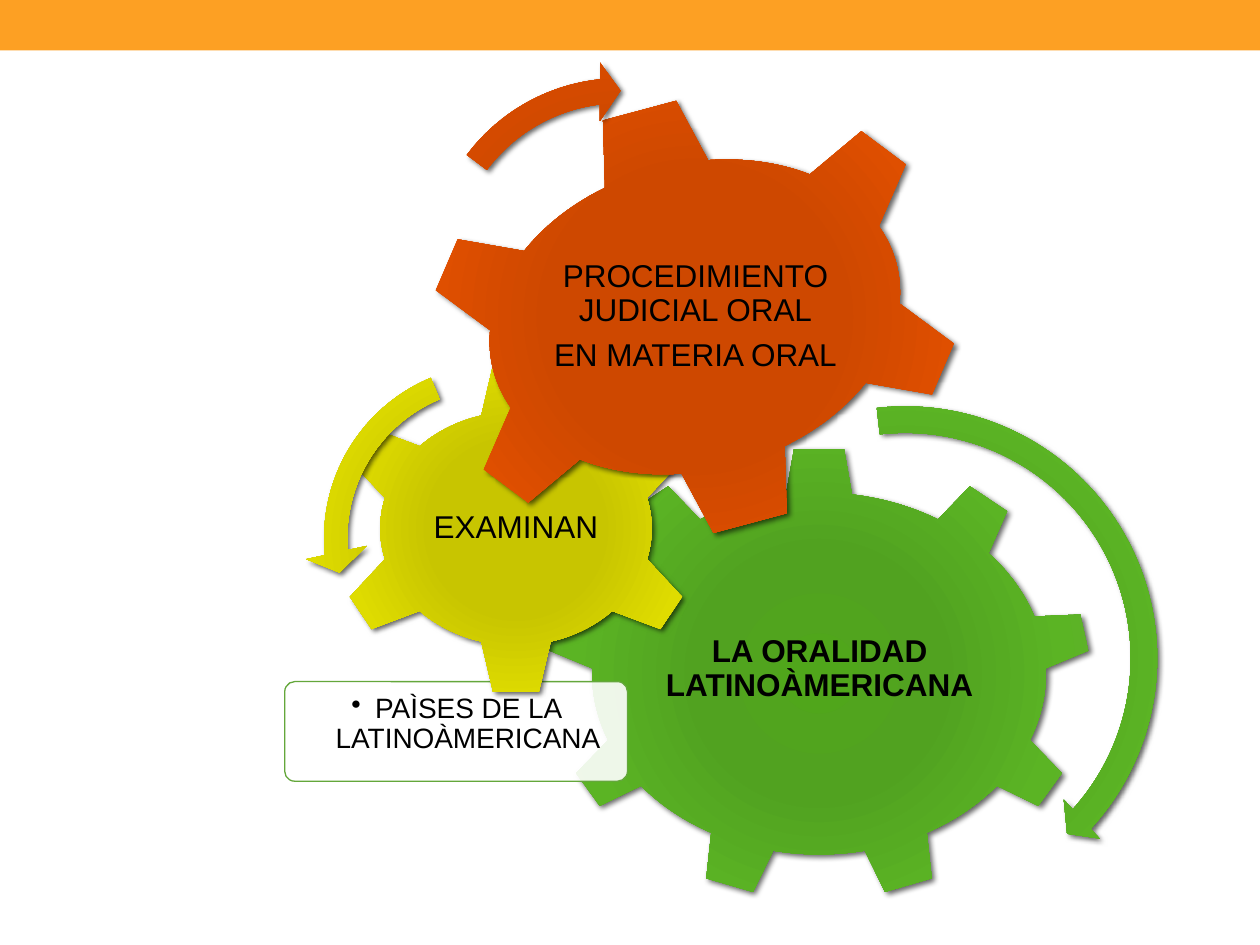
from pptx import Presentation
from pptx import util as u
from pptx.dml.color import RGBColor
from pptx.enum import shapes, text
from pptx.oxml import parse_xml
from pptx.oxml.ns import nsdecls, qn

COLORS = {"bar": "FDA023", "white": "FFFFFF", "black": "000000", "border": "64A73B"}
GRADIENTS = {
    "green": ("50A61B", "51A220", "5BB424", "64A73B"),
    "yellow": ("C8C500", "C8C500", "DFDC00", "C8C621"),
    "orange": ("CE4800", "CE4800", "E55100", "EB5605"),
}
STOPS = (0, 34, 70, 100)
KIND = shapes.MSO_SHAPE


def rgb(name):
    return RGBColor.from_string(COLORS[name])


class GearSlide:
    font = "Arial"

    def __init__(self, slide):
        self.slide = slide

    def shape(self, kind, box, adjustments=(), rotation=0):
        shape = self.slide.shapes.add_shape(kind, *map(u.Inches, box))
        shape.shadow.inherit = False
        shape.rotation = rotation
        for index, value in enumerate(adjustments):
            shape.adjustments[index] = value
        shape.line.fill.background()
        return shape

    def panel(self, kind, box, fill, border=None, opacity=100, adjustments=()):
        shape = self.shape(kind, box, adjustments)
        shape.fill.solid()
        shape.fill.fore_color.rgb = rgb(fill)
        if opacity < 100:
            color = shape._element.spPr.find(qn("a:solidFill"))[0]
            color.append(parse_xml(f'<a:alpha {nsdecls("a")} val="{opacity * 1000}"/>'))
        if border:
            shape.line.color.rgb = rgb(border)
            shape.line.width = u.Pt(0.75)

    def glossy(self, kind, box, gradient, adjustments=(), rotation=0):
        """A gear or curved arrow with a radial gradient and a soft shadow."""
        properties = self.shape(kind, box, adjustments, rotation)._element.spPr
        stops = "".join(
            f'<a:gs pos="{stop * 1000}"><a:srgbClr val="{color}"/></a:gs>'
            for stop, color in zip(STOPS, GRADIENTS[gradient]))
        properties.find(qn("a:ln")).addprevious(parse_xml(
            f'<a:gradFill {nsdecls("a")} rotWithShape="1"><a:gsLst>{stops}</a:gsLst>'
            '<a:path path="circle"><a:fillToRect l="100000" t="100000" r="100000" '
            'b="100000"/></a:path></a:gradFill>'))
        properties.find(qn("a:effectLst")).append(parse_xml(
            f'<a:outerShdw {nsdecls("a")} blurRad="{u.Pt(3)}" dist="{u.Pt(2)}" '
            f'dir="{45 * 60000}" rotWithShape="0"><a:srgbClr val="{COLORS["black"]}">'
            '<a:alpha val="60000"/></a:srgbClr></a:outerShdw>'))

    def label(self, box, lines, size=18, bold=False, inset=0.03, after=6.3,
              anchor=text.MSO_ANCHOR.MIDDLE, bullet=False):
        frame = self.slide.shapes.add_textbox(*map(u.Inches, box)).text_frame
        margins = {f"margin_{side}": u.Inches(inset)
                   for side in ("left", "top", "right", "bottom")}
        for name, value in {"word_wrap": True, "vertical_anchor": anchor, **margins}.items():
            setattr(frame, name, value)
        frame.text = "\n".join(lines)
        paragraph_format = {"alignment": text.PP_ALIGN.CENTER, "line_spacing": 0.9,
                            "space_after": u.Pt(after)}
        font_format = {"name": self.font, "size": u.Pt(size), "bold": bold}
        for paragraph in frame.paragraphs:
            for name, value in paragraph_format.items():
                setattr(paragraph, name, value)
            font = paragraph.runs[0].font
            for name, value in font_format.items():
                setattr(font, name, value)
            font.color.rgb = rgb("black")
            if bullet:
                properties = paragraph._p.get_or_add_pPr()
                properties.set("marL", str(u.Inches(0.19)))
                properties.set("indent", str(u.Inches(-0.19)))
                properties.append(parse_xml(f'<a:buChar {nsdecls("a")} char="•"/>'))


def main():
    presentation = Presentation()
    presentation.slide_width, presentation.slide_height = u.Inches(10), u.Inches(7.5)
    page = GearSlide(presentation.slides.add_slide(presentation.slide_layouts[6]))

    # Top bar
    page.panel(KIND.RECTANGLE, (0, 0, 10, 0.4), "bar")

    # Green gear and its note
    page.glossy(KIND.GEAR_9, (4.34, 3.55, 4.32, 3.59), "green")
    page.label((5.16, 4.39, 2.69, 1.85), ["LA ORALIDAD LATINOÀMERICANA"], bold=True)
    page.panel(KIND.ROUNDED_RECTANGLE, (2.26, 5.41, 2.72, 0.79), "white",
               border="border", opacity=90, adjustments=[0.1])
    page.label((2.28, 5.44, 2.68, 0.74), ["PAÌSES DE LA LATINOÀMERICANA"], size=16,
               inset=0.07, after=2.4, anchor=text.MSO_ANCHOR.TOP, bullet=True)

    # Yellow gear
    page.glossy(KIND.GEAR_6, (2.62, 2.87, 2.95, 2.65), "yellow")
    page.label((3.33, 3.54, 1.53, 1.31), ["EXAMINAN"])

    # Orange gear
    page.glossy(KIND.GEAR_6, (3.34, 0.78, 4.35, 3.47), "orange", rotation=345)
    page.label((4.35, 1.49, 2.34, 2.05), ["PROCEDIMIENTO JUDICIAL ORAL", "EN MATERIA ORAL"])

    # Turning arrows
    page.glossy(KIND.CIRCULAR_ARROW, (5.08, 3.12, 4.21, 4.21), "green",
                (0.05, 2.99, 25.4, 158.11, 0.05))
    page.glossy(KIND.LEFT_CIRCULAR_ARROW, (2.42, 2.74, 3.06, 3.06), "yellow",
                (0.06, 4.3, 104.89, 148.38, 0.08))
    page.glossy(KIND.CIRCULAR_ARROW, (3.27, 0.49, 3.3, 3.3), "orange",
                (0.06, 3.94, 133.14, 105.08, 0.07), rotation=41.7)

    presentation.save("out.pptx")


if __name__ == "__main__":
    main()
